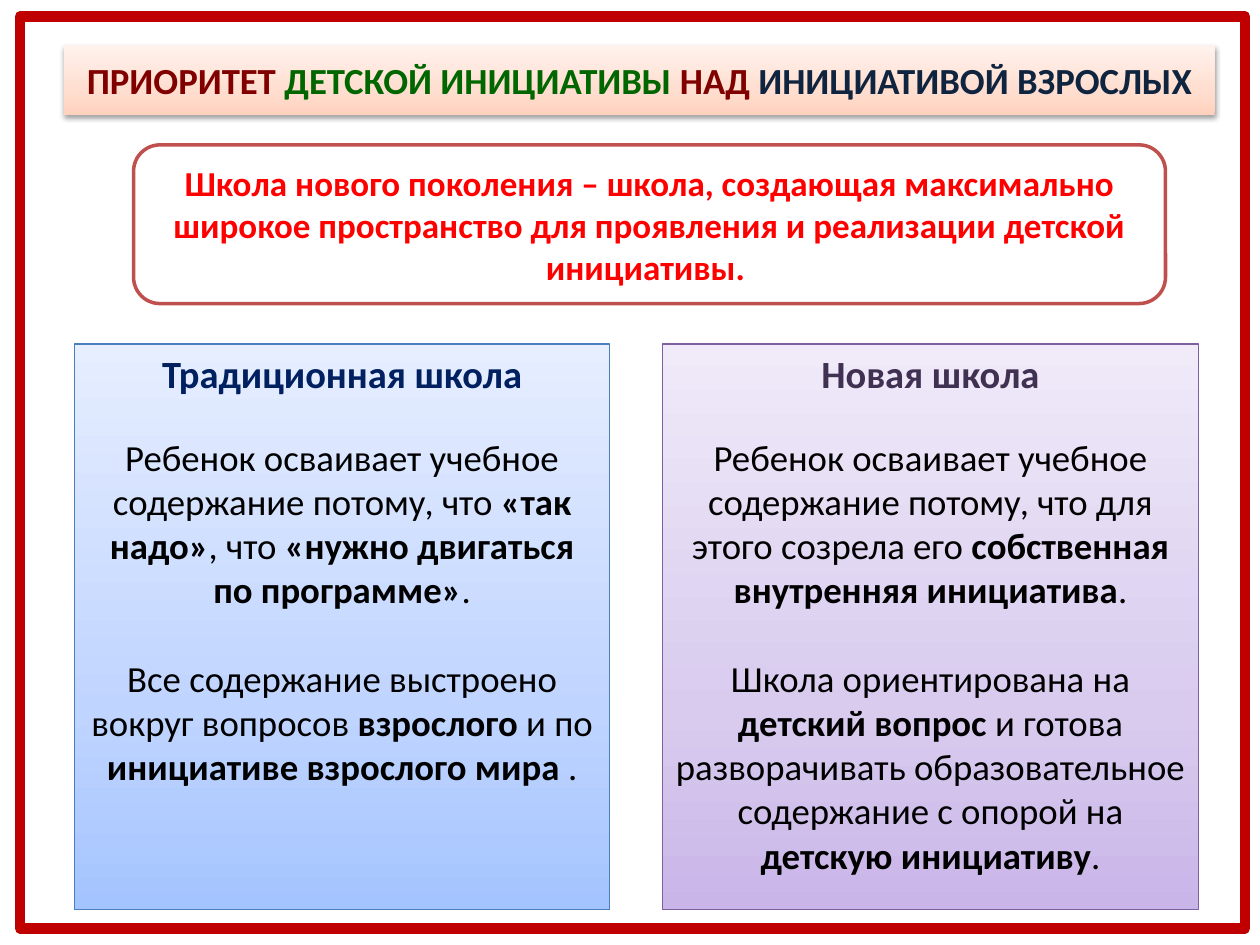
from copy import deepcopy

from lxml import etree
from pptx import Presentation
from pptx.dml.color import RGBColor
from pptx.enum import shapes, text
from pptx.oxml.ns import qn
from pptx.util import Inches, Pt

FONT = "Calibri"
BLACK = RGBColor(0x00, 0x00, 0x00)
WHITE = RGBColor(0xFF, 0xFF, 0xFF)
RED = RGBColor(0xFF, 0x00, 0x00)
FRAME_RED = RGBColor(0xC0, 0x00, 0x00)
THESIS_LINE = RGBColor(0xC0, 0x50, 0x4D)
MAROON = RGBColor(0x80, 0x00, 0x00)
GREEN = RGBColor(0x00, 0x66, 0x00)
DARK_BLUE = RGBColor(0x0F, 0x24, 0x3E)
NAVY = RGBColor(0x00, 0x20, 0x60)
PLUM = RGBColor(0x40, 0x31, 0x52)
BLUE_LINE = RGBColor(0x4B, 0x7E, 0xBC)
PURPLE_LINE = RGBColor(0x7D, 0x60, 0xA0)
PEACH = [RGBColor(0xFF, 0xD2, 0xBD), RGBColor(0xFF, 0xDE, 0xD0), RGBColor(0xFF, 0xF2, 0xED)]
BLUES = [RGBColor(0xA4, 0xC4, 0xFF), RGBColor(0xBF, 0xD4, 0xFF), RGBColor(0xE6, 0xEE, 0xFF)]
PURPLES = [RGBColor(0xC9, 0xB5, 0xE8), RGBColor(0xD8, 0xCB, 0xEE), RGBColor(0xF0, 0xEA, 0xF9)]

TITLE = [
    ("ПРИОРИТЕТ ", MAROON),
    ("ДЕТСКОЙ ИНИЦИАТИВЫ ", GREEN),
    ("НАД ", MAROON),
    ("ИНИЦИАТИВОЙ ВЗРОСЛЫХ", DARK_BLUE),
]
THESIS = (
    "Школа нового поколения – школа, создающая максимально широкое "
    "пространство для проявления и реализации детской инициативы. "
)
SCHOOLS = [
    ("Традиционная школа", NAVY, BLUES, BLUE_LINE, [
        "Ребенок осваивает учебное содержание потому, что **«так надо»**, "
        "что **«нужно двигаться по программе»**.",
        "Все содержание выстроено вокруг вопросов **взрослого** и по "
        "**инициативе взрослого мира **.",
    ]),
    ("Новая школа", PLUM, PURPLES, PURPLE_LINE, [
        "Ребенок осваивает учебное содержание потому, что для этого созрела его "
        "**собственная внутренняя инициатива**.",
        "Школа ориентирована на **детский вопрос **и готова разворачивать "
        "образовательное содержание с опорой на **детскую инициативу**.",
    ]),
]


def add_span(para, words, size, color, bold=True):
    """Append a formatted run to a paragraph."""
    span = para.add_run()
    span.text = words
    span.font.name = FONT
    span.font.size = Pt(size)
    span.font.bold = bold
    span.font.color.rgb = color


def fill_gradient(box, colors):
    """Fill a shape with a three-stop gradient rising from the bottom."""
    box.fill.gradient()
    box.fill.gradient_angle = 90
    stop_list = box.element.spPr.find(".//" + qn("a:gsLst"))
    stop_list.append(deepcopy(stop_list[-1]))
    for stop, color, position in zip(box.fill.gradient_stops, colors, (0, 0.35, 1)):
        stop.color.rgb = color
        stop.position = position


def add_box(page, kind, area, line_color, line_width):
    """Add an unfilled, shadowless outlined shape."""
    box = page.shapes.add_shape(kind, *map(Inches, area))
    box.shadow.inherit = False
    box.fill.background()
    box.line.color.rgb = line_color
    box.line.width = Pt(line_width)
    box.text_frame.word_wrap = True
    return box


def add_drop_shadow(box):
    """Give a shape a soft shadow below it."""
    effects = etree.SubElement(box.element.spPr, qn("a:effectLst"))
    shadow = etree.SubElement(effects, qn("a:outerShdw"), blurRad="40000",
                              dist="20000", dir="5400000", rotWithShape="0")
    color = etree.SubElement(shadow, qn("a:srgbClr"), val="000000")
    etree.SubElement(color, qn("a:alpha"), val="38000")


def place_title(page, area):
    """Place the title placeholder as a shaded banner."""
    banner = page.shapes.title
    banner.left, banner.top, banner.width, banner.height = map(Inches, area)
    fill_gradient(banner, PEACH)
    add_drop_shadow(banner)
    frame = banner.text_frame
    frame.auto_size = text.MSO_AUTO_SIZE.NONE
    frame.word_wrap = True
    frame.vertical_anchor = text.MSO_ANCHOR.MIDDLE
    para = frame.paragraphs[0]
    para.alignment = text.PP_ALIGN.CENTER
    for words, color in TITLE:
        add_span(para, words, 21, color)


def place_thesis(page, area):
    """Place the rounded box with the main statement."""
    box = add_box(page, shapes.MSO_SHAPE.ROUNDED_RECTANGLE, area, THESIS_LINE, 2)
    box.fill.solid()
    box.fill.fore_color.rgb = WHITE
    box.text_frame.vertical_anchor = text.MSO_ANCHOR.MIDDLE
    para = box.text_frame.paragraphs[0]
    para.alignment = text.PP_ALIGN.CENTER
    add_span(para, THESIS, 20, RED)


def place_school(page, area, heading, heading_color, colors, line_color, points):
    """Place one school panel with its heading and points."""
    panel = add_box(page, shapes.MSO_SHAPE.RECTANGLE, area, line_color, 0.75)
    fill_gradient(panel, colors)
    frame = panel.text_frame
    frame.vertical_anchor = text.MSO_ANCHOR.TOP
    add_span(frame.paragraphs[0], heading, 22, heading_color)
    for point, gap in zip(points, (22, 25.5)):
        para = frame.add_paragraph()
        para.space_before = Pt(gap)
        for index, words in enumerate(point.split("**")):
            add_span(para, words, 21, BLACK, bold=index % 2 == 1)
    for para in frame.paragraphs:
        para.alignment = text.PP_ALIGN.CENTER


def main():
    """Build and save the slide."""
    deck = Presentation()
    deck.slide_width, deck.slide_height = Inches(10), Inches(7.5)
    page = deck.slides.add_slide(deck.slide_layouts.get_by_name("Title Only"))
    add_box(page, shapes.MSO_SHAPE.RECTANGLE, (0.16, 0.13, 9.72, 7.24), FRAME_RED, 6)
    place_title(page, (0.51, 0.36, 9.13, 0.55))
    place_thesis(page, (1.06, 1.15, 8.19, 1.26))
    for index, school in enumerate(SCHOOLS):
        place_school(page, (0.59 + index * 4.67, 2.73, 4.25, 4.49), *school)
    deck.save("out.pptx")


if __name__ == "__main__":
    main()
